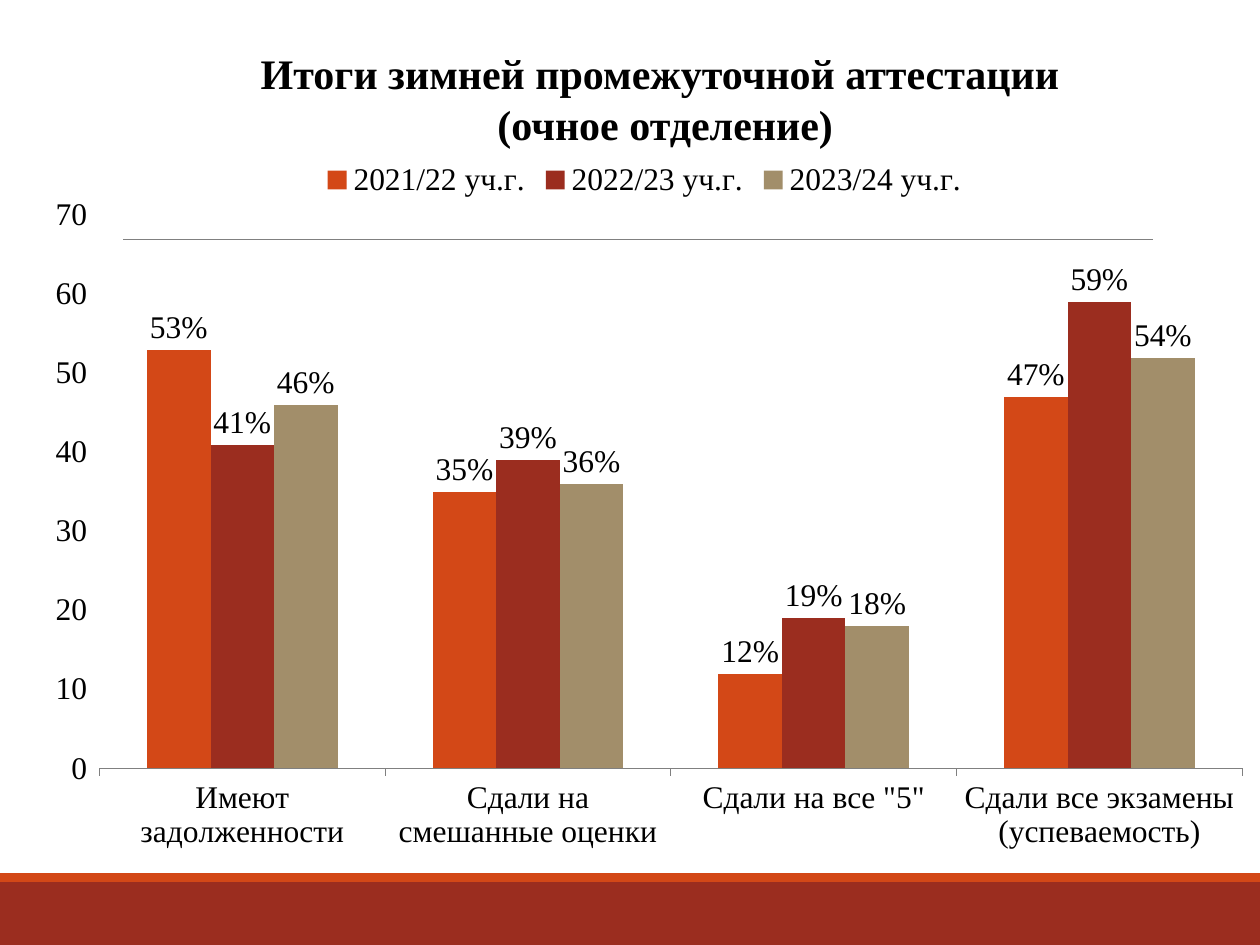
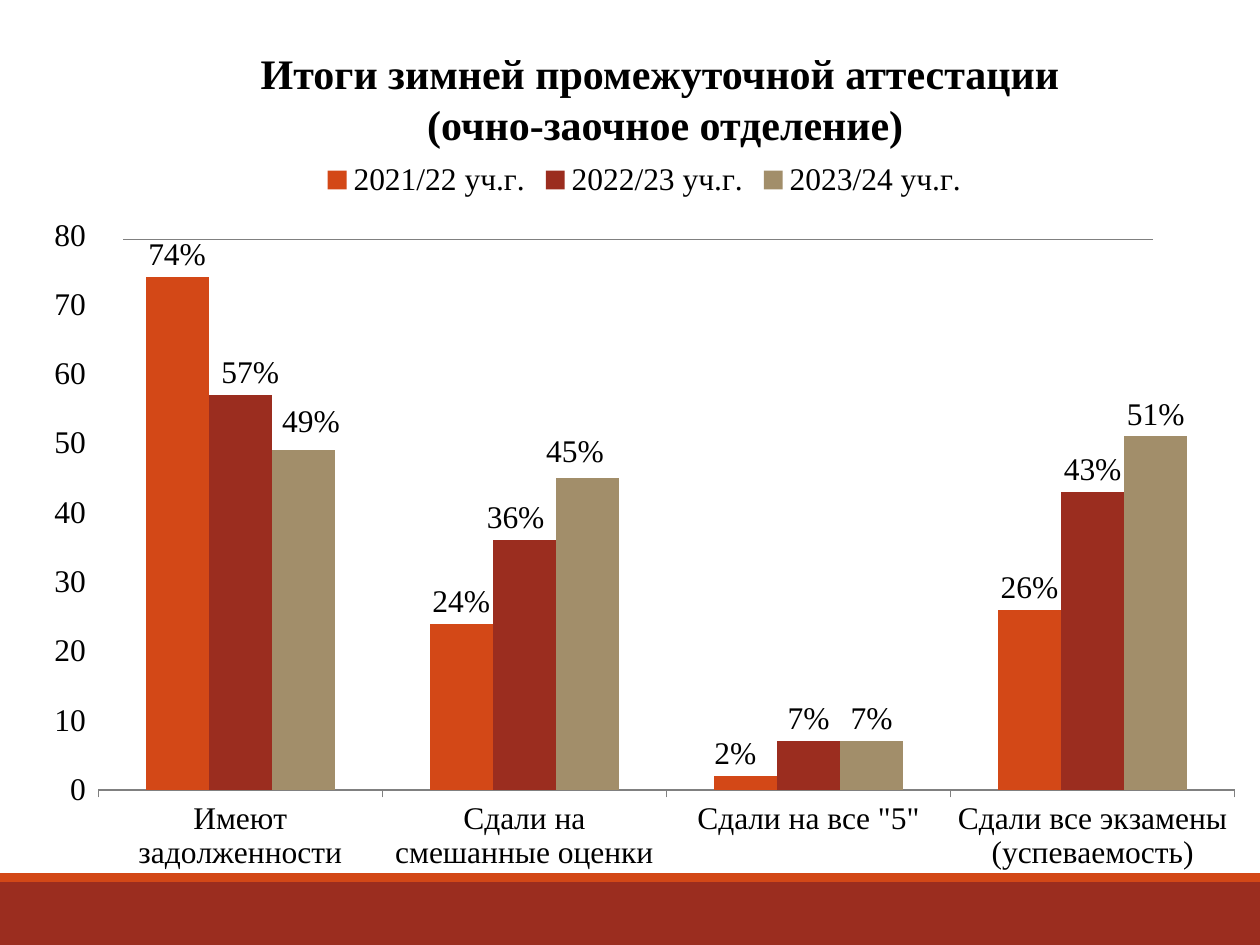
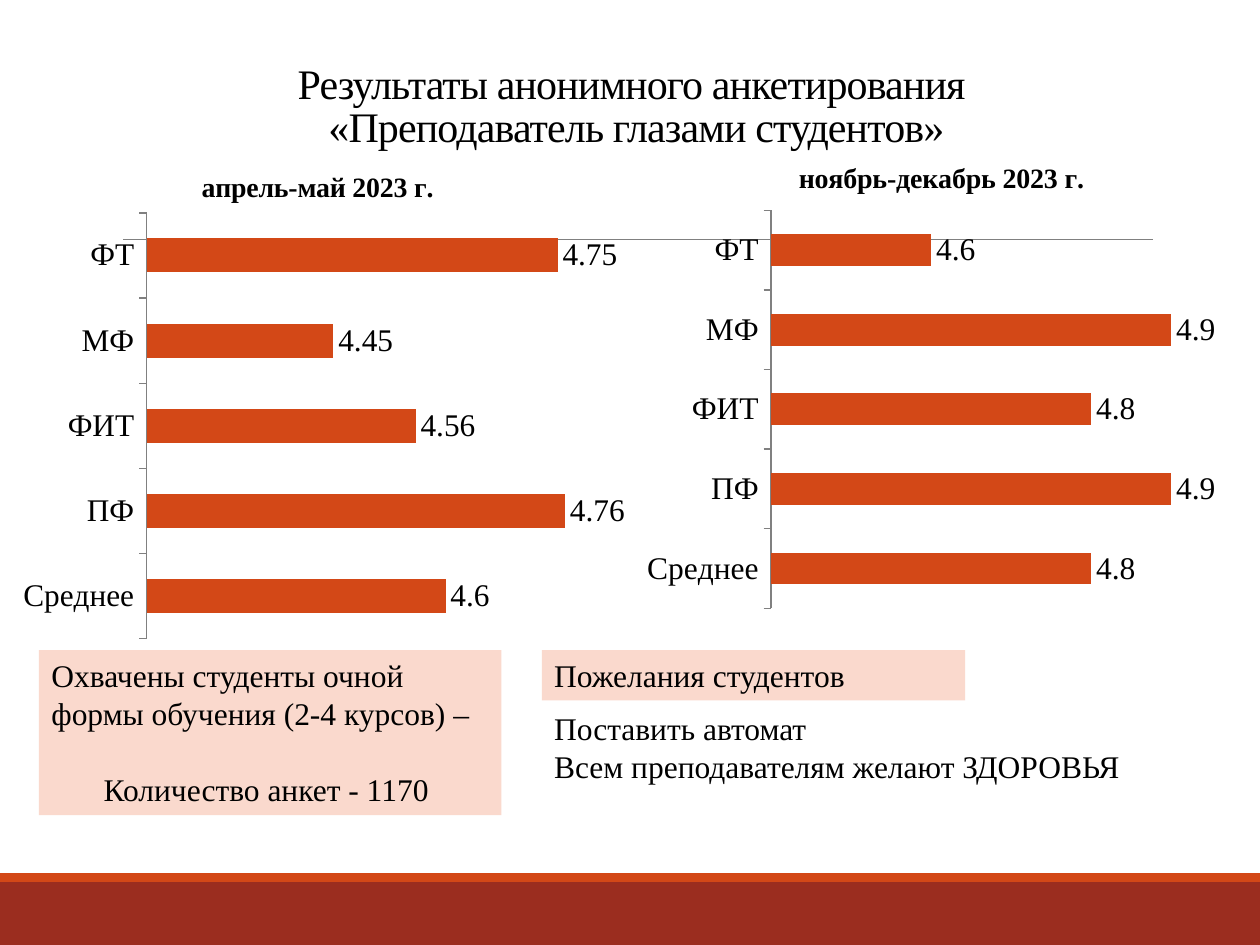
from lxml import etree
from pptx import Presentation
from pptx.chart.data import CategoryChartData
from pptx.dml.color import RGBColor
from pptx.enum import chart as kinds, shapes, text
from pptx.oxml import ns
from pptx.util import Inches, Pt

FONT = "Times New Roman"
BLACK = RGBColor(0x00, 0x00, 0x00)
WHITE = RGBColor(0xFF, 0xFF, 0xFF)
GRAY = RGBColor(0x80, 0x80, 0x80)
ORANGE = RGBColor(0xD3, 0x48, 0x17)
RED = RGBColor(0x9B, 0x2D, 0x1F)
TAN = RGBColor(0xA2, 0x8E, 0x6A)
PEACH = RGBColor(0xFA, 0xD9, 0xCD)

YEARS = ["2021/22 уч.г.", "2022/23 уч.г.", "2023/24 уч.г."]
RESULTS = ["Имеют задолженности", "Сдали на смешанные оценки",
           'Сдали на все "5"', "Сдали все экзамены (успеваемость)"]
FACULTIES = ["Среднее", "ПФ", "ФИТ", "МФ", "ФТ"]
RESULTS_BOX = (0.23, 1.17, 9.77, 5.86)


def style_font(font, size=18, bold=False):
    font.name = FONT
    font.size = Pt(size)
    font.bold = bold
    font.color.rgb = BLACK


def add_span(para, words, size=18, bold=False):
    span = para.add_run()
    span.text = words
    style_font(span.font, size, bold)
    return span


def add_block(page, left, top, width, height, color):
    block = page.shapes.add_shape(shapes.MSO_SHAPE.RECTANGLE, Inches(left), Inches(top),
                                  Inches(width), Inches(height))
    block.shadow.inherit = False
    block.fill.solid()
    block.fill.fore_color.rgb = color
    block.line.fill.background()
    return block


def add_page(deck):
    """Add a blank page with the shared bottom bands and the rule under the title."""
    page = deck.slides.add_slide(deck.slide_layouts[6])
    add_block(page, 0, 7, 10, 0.5, RED)
    add_block(page, 0, 6.93, 10, 0.07, ORANGE)
    rule = page.shapes.add_connector(shapes.MSO_CONNECTOR.STRAIGHT, Inches(0.98), Inches(1.9),
                                     Inches(9.15), Inches(1.9))
    rule.line.color.rgb = GRAY
    rule.line.width = Pt(0.5)
    etree.SubElement(rule.element.xpath("p:spPr")[0], ns.qn("a:effectLst"))
    return page


def add_title(page, lines, box, anchor, bold=False, line_spacing=None, tracking=0):
    """Tracking is in hundredths of a point."""
    title = page.shapes.add_textbox(*map(Inches, box))
    frame = title.text_frame
    frame.word_wrap = True
    frame.vertical_anchor = anchor
    para = frame.paragraphs[0]
    para.alignment = text.PP_ALIGN.CENTER
    para.line_spacing = line_spacing
    for number, line in enumerate(lines):
        if number:
            para.add_line_break()
        span = add_span(para, line, 24, bold)
        if tracking:
            span.font.element.set("spc", str(tracking)) if hasattr(
                span.font, "element") else para.runs[-1]._r.get_or_add_rPr().set("spc", str(tracking))


def add_note(page, left, top, width, height, color, lines):
    note = add_block(page, left, top, width, height, color)
    frame = note.text_frame
    frame.word_wrap = True
    frame.vertical_anchor = text.MSO_ANCHOR.TOP
    for number, line in enumerate(lines):
        para = frame.add_paragraph() if number else frame.paragraphs[0]
        para.alignment = text.PP_ALIGN.LEFT
        add_span(para, line)
    return frame


def set_layout(parent, index, **places):
    """Give a chart part a manual layout, as fractions of the chart."""
    for old in parent.findall(ns.qn("c:layout")):
        parent.remove(old)
    layout = etree.Element(ns.qn("c:layout"))
    manual = etree.SubElement(layout, ns.qn("c:manualLayout"))
    for name, value in places.items():
        etree.SubElement(manual, ns.qn(f"c:{name}")).set("val", str(value))
    parent.insert(index, layout)


def add_bars(page, kind, box, plot_box, categories, series, colors, limits, label_format):
    """Add a bar chart; box and plot_box are in inches on the page."""
    data = CategoryChartData()
    data.categories = categories
    for name, values in series:
        data.add_series(name, values)
    chart = page.shapes.add_chart(kind, *map(Inches, box), data).chart
    style_font(chart.font)
    chart.has_title = False
    chart.has_legend = False

    plot = chart.plots[0]
    plot.gap_width = 150
    plot.overlap = 0
    plot.vary_by_categories = False
    for bars, color in zip(plot.series, colors):
        bars.invert_if_negative = False
        bars.format.fill.solid()
        bars.format.fill.fore_color.rgb = color
        labels = bars.data_labels
        labels.show_value = True
        labels.position = kinds.XL_LABEL_POSITION.OUTSIDE_END
        labels.number_format = label_format
        labels.number_format_is_linked = False
        style_font(labels.font)

    axis = chart.category_axis
    axis.format.line.color.rgb = GRAY
    axis.major_tick_mark = kinds.XL_TICK_MARK.OUTSIDE
    axis.has_major_gridlines = False
    scale = chart.value_axis
    scale.has_major_gridlines = False
    scale.minimum_scale, scale.maximum_scale = limits
    scale.format.line.fill.background()

    left, top, width, height = box
    x, y, w, h = plot_box
    set_layout(chart.element.xpath("//c:plotArea")[0], 0, layoutTarget="inner",
               xMode="edge", yMode="edge", x=(x - left) / width, y=(y - top) / height,
               w=w / width, h=h / height)
    return chart


def add_results_chart(page, rows, plot_box, maximum):
    chart = add_bars(page, kinds.XL_CHART_TYPE.COLUMN_CLUSTERED, RESULTS_BOX, plot_box, RESULTS,
                     list(zip(YEARS, rows)), (ORANGE, RED, TAN), (0, maximum), '0"%"')
    chart.value_axis.major_unit = 10
    chart.has_legend = True
    chart.legend.position = kinds.XL_LEGEND_POSITION.TOP
    chart.legend.include_in_layout = False
    style_font(chart.legend.font)
    return chart


def set_label(chart, row, column, words, shift=None):
    """Write one data label by hand and shift it by inches if asked."""
    label = chart.plots[0].series[row].points[column].data_label
    add_span(label.text_frame.paragraphs[0], words)
    label.position = kinds.XL_LABEL_POSITION.OUTSIDE_END
    if shift:
        element = chart.element.xpath(
            f"//c:ser[c:idx/@val='{row}']//c:dLbl[c:idx/@val='{column}']")[0]
        set_layout(element, 1, x=shift[0] / RESULTS_BOX[2], y=shift[1] / RESULTS_BOX[3])


def add_survey_chart(page, period, values, box, plot_box, limits, title_at):
    chart = add_bars(page, kinds.XL_CHART_TYPE.BAR_CLUSTERED, box, plot_box, FACULTIES,
                     [("Series 1", values)], (ORANGE,), limits, "General")
    chart.value_axis.visible = False
    chart.has_title = True
    add_span(chart.chart_title.text_frame.paragraphs[0], period, 16, True)
    set_layout(chart.element.xpath("//c:chart/c:title")[0], 1, xMode="edge", yMode="edge",
               x=(title_at[0] - box[0]) / box[2], y=(title_at[1] - box[1]) / box[3])


def add_results_page(deck, department, rows, plot_box, maximum):
    page = add_page(deck)
    add_title(page, ["Итоги зимней промежуточной аттестации ", department],
              (0.78, 0.31, 9, 0.94), text.MSO_ANCHOR.MIDDLE, bold=True)
    return add_results_chart(page, rows, plot_box, maximum)


def add_survey_page(deck):
    page = add_page(deck)
    add_title(page, ["Результаты анонимного анкетирования ", "«Преподаватель глазами студентов»"],
              (0.55, 0, 9, 1.25), text.MSO_ANCHOR.BOTTOM, line_spacing=0.85, tracking=-50)
    add_survey_chart(page, "апрель-май 2023 г.", (4.6, 4.76, 4.56, 4.45, 4.75),
                     (0.11, 1.09, 4.85, 4.06), (1.17, 1.69, 3.58, 3.38), (4.2, 4.8), (1.57, 1.3))
    add_survey_chart(page, "ноябрь-декабрь 2023 г.", (4.8, 4.9, 4.8, 4.9, 4.6),
                     (5.04, 1.08, 5, 3.83), (6.12, 1.67, 3.81, 3.16), (4.4, 5), (6.3, 1.23))
    coverage = add_note(page, 0.31, 5.16, 3.67, 1.31, PEACH,
                        ["Охвачены студенты очной формы обучения (2-4 курсов) –",
                         "Количество анкет - 1170 "])
    count = coverage.paragraphs[1]
    count.alignment = text.PP_ALIGN.CENTER
    count.space_before = Pt(21.5)
    add_note(page, 4.3, 5.16, 3.36, 0.4, PEACH, ["Пожелания студентов"])
    add_note(page, 4.3, 5.58, 5.7, 0.71, WHITE,
             ["Поставить автомат", "Всем преподавателям желают ЗДОРОВЬЯ"])


def main():
    deck = Presentation()
    deck.slide_width, deck.slide_height = Inches(10), Inches(7.5)

    full_time = add_results_page(
        deck, "(очное отделение)",
        [(53, 35, 12, 47), (41, 39, 19, 59), (46, 36, 18, 52)], (0.79, 1.71, 9.07, 4.39), 70)
    set_label(full_time, 2, 3, "54%")

    part_time = add_results_page(
        deck, "(очно-заочное отделение)",
        [(74, 24, 2, 26), (57, 36, 7, 43), (49, 45, 7, 51)], (0.78, 1.87, 9.02, 4.4), 80)
    for row, column, words, shift in [(1, 0, "57%", (0.08, 0)), (2, 0, "49%", (0.06, -0.05)),
                                      (1, 1, "36%", (-0.07, 0)), (2, 1, "45%", (-0.1, -0.03)),
                                      (0, 2, "2%", (-0.08, 0))]:
        set_label(part_time, row, column, words, shift)

    add_survey_page(deck)
    deck.save("out.pptx")


if __name__ == "__main__":
    main()
